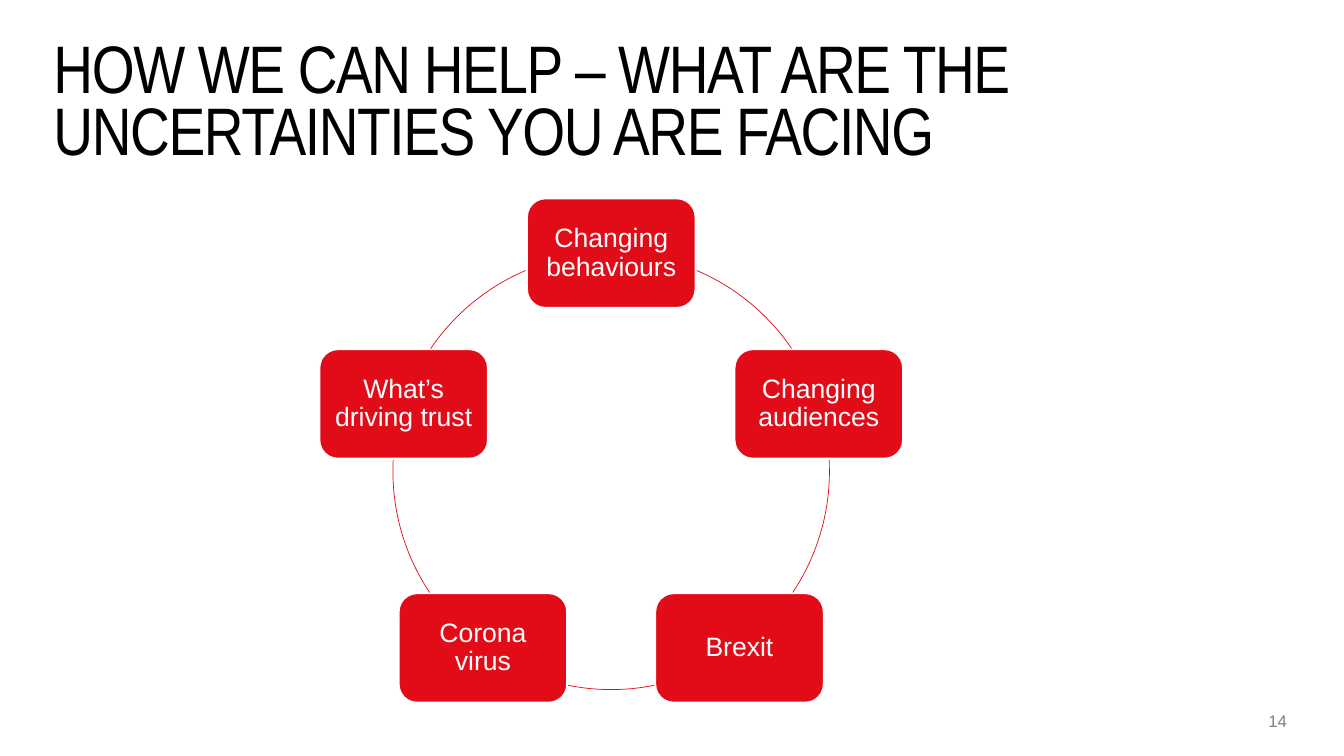
import math
from pptx import Presentation
from pptx.dml.color import RGBColor
from pptx.enum import shapes, text
from pptx.util import Pt

# Content
TITLE = "HOW WE CAN HELP – WHAT ARE THE UNCERTAINTIES YOU ARE FACING"
PAGE_NUMBER = "14"
# Clockwise from the top: label, then start and end angle of the arc that follows
TOPICS = [
    ("Changing behaviours", 293.1, 325.8),
    ("Changing audiences", 357, 33.7),
    ("Brexit", 78.6, 101.4),
    ("Corona virus", 146.3, 183),
    ("What’s driving trust", 214.2, 246.9),
]

THEME = {
    "red": RGBColor(0xE2, 0x0C, 0x18),
    "white": RGBColor(0xFF, 0xFF, 0xFF),
    "black": RGBColor(0, 0, 0),
    "grey": RGBColor(0x80, 0x80, 0x80),
    "title": Pt(48), "label": Pt(19), "number": Pt(12),
    "heading font": "Arial Narrow", "body font": "Arial",
}

# Ring geometry in points
CENTRE_X, CENTRE_Y, RADIUS = 436.6, 336.7, 155.9
BOX_WIDTH, BOX_HEIGHT = 120, 77.8


def apply(target, values):
    for name, value in values.items():
        setattr(target, name, value)


def write(shape, words, inset, frame_format, para_format, font_name, size, colour):
    frame = shape.text_frame
    apply(frame, {f"margin_{side}": Pt(inset) for side in ("left", "top", "right", "bottom")})
    apply(frame, {"word_wrap": True, "auto_size": text.MSO_AUTO_SIZE.NONE, **frame_format})
    para = frame.paragraphs[0]
    apply(para, para_format)
    span = para.add_run()
    span.text = words
    apply(span.font, {"name": THEME[font_name], "size": THEME[size]})
    span.font.color.rgb = THEME[colour]
    return span


def add_ring_shape(page, kind, left, top, width, height, line_colour, line_width):
    shape = page.shapes.add_shape(kind, Pt(left), Pt(top), Pt(width), Pt(height))
    shape.shadow.inherit = False
    shape.line.color.rgb = THEME[line_colour]
    shape.line.width = Pt(line_width)
    return shape


def add_topic(page, index, label):
    angle = 2 * math.pi * index / len(TOPICS)
    left = CENTRE_X + RADIUS * math.sin(angle) - BOX_WIDTH / 2
    top = CENTRE_Y - RADIUS * math.cos(angle) - BOX_HEIGHT / 2
    box = add_ring_shape(page, shapes.MSO_SHAPE.ROUNDED_RECTANGLE,
                         left, top, BOX_WIDTH, BOX_HEIGHT, "white", 1)
    box.fill.solid()
    box.fill.fore_color.rgb = THEME["red"]
    write(box, label, 5.7, {"vertical_anchor": text.MSO_ANCHOR.MIDDLE},
          {"alignment": text.PP_ALIGN.CENTER, "line_spacing": 0.9},
          "body font", "label", "white")


def add_arc(page, start, end):
    arc = add_ring_shape(page, shapes.MSO_SHAPE.ARC, CENTRE_X - RADIUS, CENTRE_Y - RADIUS,
                         2 * RADIUS, 2 * RADIUS, "red", 0.5)
    arc.fill.background()
    # Angles are stored in 60000ths of a degree, adjustments in 100000ths
    for index, degrees in enumerate((start, end)):
        arc.adjustments[index] = degrees * 0.6


def main():
    deck = Presentation()
    apply(deck, {"slide_width": Pt(960), "slide_height": Pt(540)})
    page = deck.slides.add_slide(deck.slide_layouts[5])

    # Title
    title = page.shapes.title
    apply(title, {"left": Pt(38.2), "top": Pt(32.4), "width": Pt(878.4), "height": Pt(37.4)})
    span = write(title, TITLE, 0, {"vertical_anchor": text.MSO_ANCHOR.TOP},
                 {"alignment": text.PP_ALIGN.LEFT, "line_spacing": Pt(44)},
                 "heading font", "title", "black")
    span.font._element.set("spc", "-100")

    # Page number
    number = page.shapes.add_textbox(Pt(885.6), Pt(507.6), Pt(33.8), Pt(14.4))
    write(number, PAGE_NUMBER, 0, {}, {"alignment": text.PP_ALIGN.RIGHT},
          "body font", "number", "grey")

    # Ring of topics
    for index, (label, start, end) in enumerate(TOPICS):
        add_topic(page, index, label)
        add_arc(page, start, end)

    deck.save("out.pptx")


if __name__ == "__main__":
    main()
